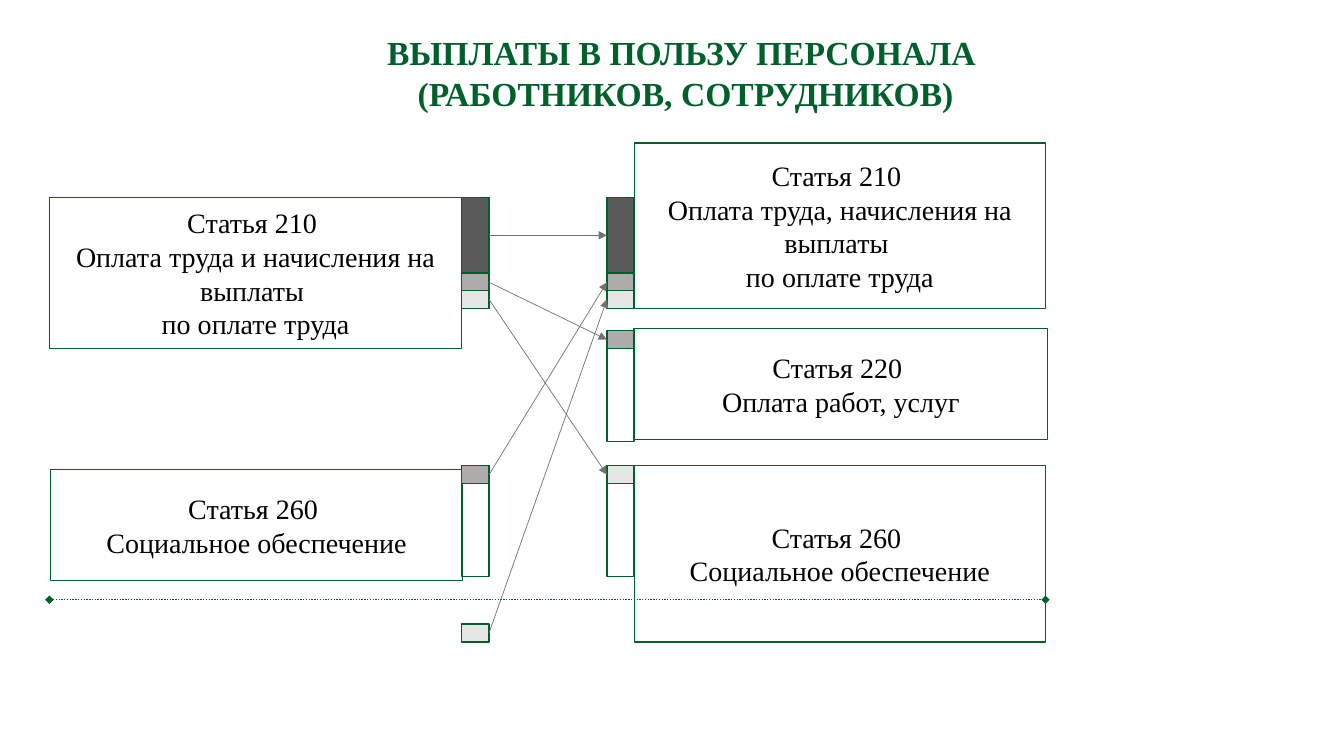
from lxml import etree
from pptx import Presentation, util as u
from pptx.dml.color import RGBColor
from pptx.enum import dml, shapes, text
from pptx.oxml.ns import qn

PX = 9144  # EMU in one px, 100 px to the inch
GREEN = RGBColor(0x00, 0x60, 0x2B)
BLACK = RGBColor(0x00, 0x00, 0x00)
WHITE = RGBColor(0xFF, 0xFF, 0xFF)
DARK = RGBColor(0x59, 0x59, 0x59)
MIDDLE = RGBColor(0xAF, 0xAB, 0xAB)
LIGHT = RGBColor(0xE7, 0xE6, 0xE6)
ARROW = RGBColor(0x76, 0x71, 0x71)

deck = Presentation()
deck.slide_width, deck.slide_height = 1333 * PX, 750 * PX
page = deck.slides.add_slide(deck.slide_layouts[6])


def add_box(left, top, width, height, fill=None, lines=(), outlined=True, **font):
    place = [value * PX for value in (left, top, width, height)]
    if outlined:
        box = page.shapes.add_shape(shapes.MSO_SHAPE.RECTANGLE, *place)
        box.shadow.inherit = False
        box.line.color.rgb, box.line.width = GREEN, u.Pt(1)
        if fill is None:
            box.fill.background()
        else:
            box.fill.solid()
            box.fill.fore_color.rgb = fill
    else:
        box = page.shapes.add_textbox(*place)
    frame = box.text_frame
    frame.word_wrap = True
    frame.vertical_anchor = text.MSO_ANCHOR.MIDDLE if outlined else text.MSO_ANCHOR.TOP
    for number, line in enumerate(lines):
        para = frame.add_paragraph() if number else frame.paragraphs[0]
        para.alignment = text.PP_ALIGN.CENTER
        span = para.add_run()
        span.text = line
        span.font.color.rgb = font.get("color", BLACK)
        look = {"name": "Times New Roman", "size": u.Pt(font.get("size", 20)),
                "bold": font.get("bold", False)}
        for key, value in look.items():
            setattr(span.font, key, value)
    return box


def add_line(start, finish, color, width, **ends):
    line = page.shapes.add_connector(shapes.MSO_CONNECTOR.STRAIGHT,
                                     *[value * PX for value in start + finish])
    line.line.color.rgb, line.line.width = color, u.Pt(width)
    if "dash" in ends:
        line.line.dash_style = ends["dash"]
    for end in ("headEnd", "tailEnd"):
        if end in ends:
            etree.SubElement(line.line._get_or_add_ln(), qn("a:" + end), type=ends[end])
    etree.SubElement(line._element.spPr, qn("a:effectLst"))
    return line


# Title
add_box(89, 27, 1182, 91, outlined=False, color=GREEN, size=24, bold=True,
        lines=["ВЫПЛАТЫ В ПОЛЬЗУ ПЕРСОНАЛА ", "(РАБОТНИКОВ, СОТРУДНИКОВ)"])

# Article boxes
articles = [
    (49, 196, 409, 150, ["Статья 210 ", "Оплата труда и начисления на выплаты ",
                         "по оплате труда"]),
    (50, 466, 409, 110, ["Статья 260 ", "Социальное обеспечение"]),
    (629, 462, 408, 175, ["Статья 260 ", "Социальное обеспечение"]),
    (629, 326, 410, 110, ["Статья 220 ", "Оплата работ, услуг"]),
    (629, 142, 408, 164, ["Статья 210 ", "Оплата труда, начисления на выплаты ",
                          "по оплате труда"]),
]
for left, top, width, height, lines in articles:
    add_box(left, top, width, height, WHITE, lines)

# Dotted divider
add_line((49, 595), (1037, 595), GREEN, 1, dash=dml.MSO_LINE.ROUND_DOT,
         headEnd="diamond", tailEnd="diamond")

# Bar outlines beside the articles
FROM, TO, BAR = 458, 602, 27
for left, top in [(FROM, 196), (FROM, 462), (TO, 196), (TO, 328), (TO, 462)]:
    add_box(left, top, BAR, 110)

# Each flow: source top, target top, block height, shade
flows = [
    (196, 196, 75, DARK),
    (271, 328, 18, MIDDLE),
    (288, 462, 18, LIGHT),
    (462, 271, 18, MIDDLE),
    (619, 288, 18, LIGHT),
]
for source_top, target_top, height, shade in flows:
    source = add_box(FROM, source_top, BAR, height, shade)
    target = add_box(TO, target_top, BAR, height, shade)
    arrow = add_line((FROM + BAR, source_top), (TO, target_top), ARROW, 0.5,
                     tailEnd="triangle")
    arrow.begin_connect(source, 3)
    arrow.end_connect(target, 1)

deck.save("out.pptx")
